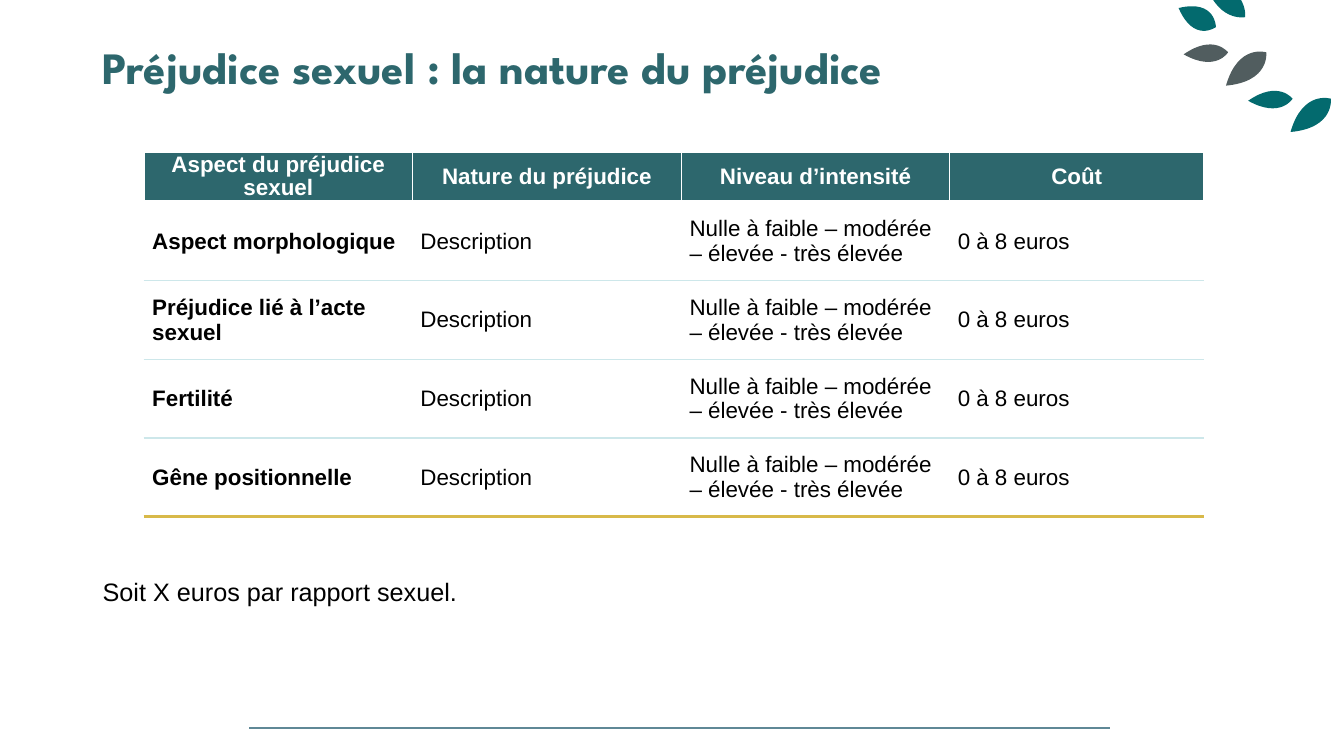
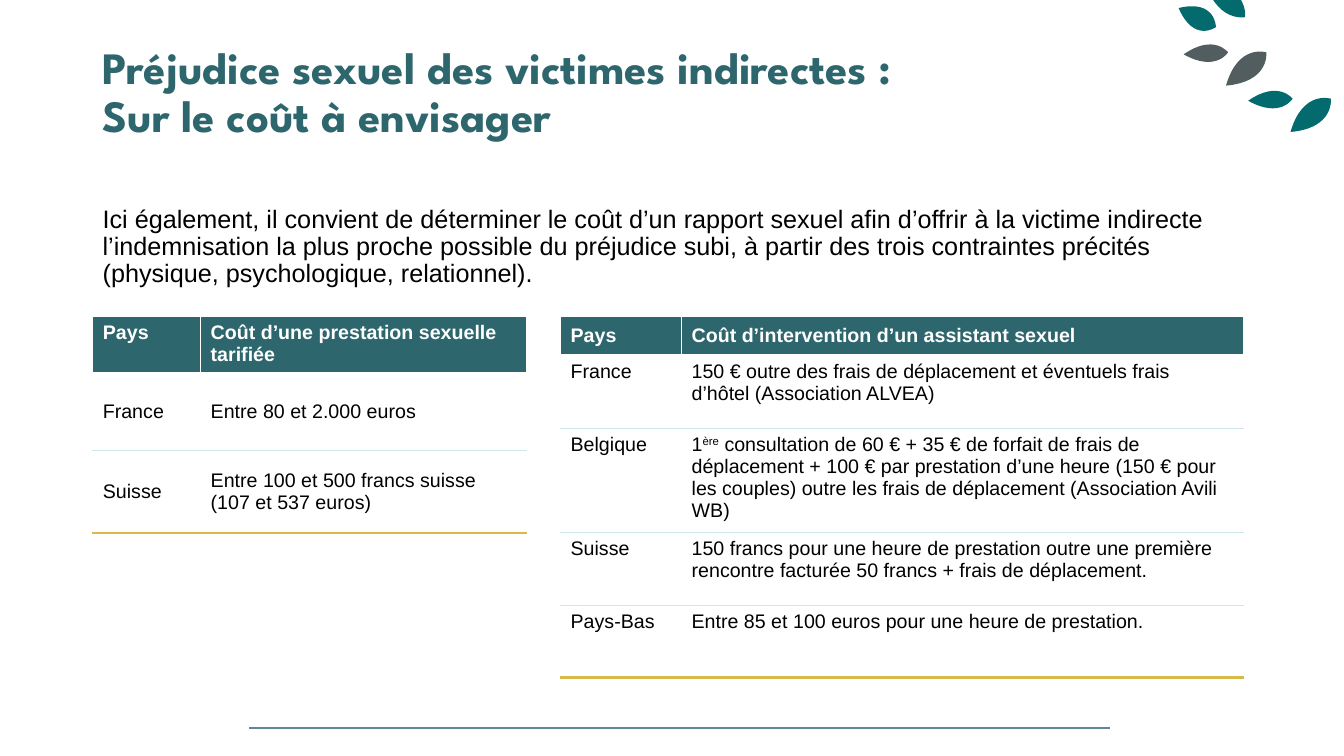
from lxml import etree
from pptx import Presentation
from pptx import util as u
from pptx.dml.color import RGBColor
from pptx.enum import shapes, text
from pptx.oxml import ns

MIDDLE, TOP = text.MSO_ANCHOR.MIDDLE, text.MSO_ANCHOR.TOP


def px(length):
    """Turn px, a hundred to the inch, into EMU."""
    return u.Emu(round(length * 9144))


def color(value):
    """Turn a hex string into a colour."""
    return RGBColor.from_string(value)


class Deck:
    """Hold the shared style and the slide being filled."""

    TITLE_FONT, BODY_FONT = "League Spartan", "Arial"
    TITLE, LEAF, GREY_LEAF, RULE = "2D676D", "036A6E", "515D5F", "5F8896"
    BLACK, WHITE, ROW_LINE, END_LINE = "000000", "FFFFFF", "CDE7EA", "D8B949"
    FLAT = ((32, 18), (44, -2), (30, -21))
    RISING = ((44, -4), (40, -33), (12, -42))
    FALLING = ((12, 45), (41, 39), (45, 9))
    SMALL = ((15, 35), (37, 19), (37, -9))
    LEAVES = (
        ((1238, 100), FLAT, LEAF),
        ((1280, 131), RISING, LEAF),
        ((1194, -22), FALLING, LEAF),
        ((1169, 8), SMALL, LEAF),
        ((1174, 54), FLAT, GREY_LEAF),
        ((1216, 85), RISING, GREY_LEAF),
    )

    def __init__(self):
        """Start an empty wide deck."""
        self.deck = Presentation()
        self.deck.slide_width, self.deck.slide_height = px(1333), px(750)
        self.page = None

    def new_page(self, title):
        """Add a slide with its leaves, bottom rule and title."""
        self.page = self.deck.slides.add_slide(self.deck.slide_layouts[6])
        self.rule(247, 1101, 722)
        for start, outline, fill in self.LEAVES:
            self.leaf(start, outline, fill)
        self.text_box(title, 40, 1019, 101, self.TITLE_FONT, 32, self.TITLE, True)

    def rule(self, left, right, top):
        """Draw a thin horizontal line."""
        line = self.page.shapes.add_connector(
            shapes.MSO_CONNECTOR.STRAIGHT, px(left), px(top), px(right), px(top))
        line.line.color.rgb = color(self.RULE)
        line.line.width = u.Pt(1.5)
        etree.SubElement(line._element.spPr, ns.qn("a:effectLst"))

    def leaf(self, start, outline, fill, steps=12):
        """Draw a leaf whose two curved edges meet at its tip."""
        upper, tip, lower = outline
        edges = (((0, 0), upper, tip, tip), (tip, tip, lower, (0, 0)))
        points = []
        for edge in edges:
            for step in range(1, steps + 1):
                t = step / steps
                weights = ((1 - t) ** 3, 3 * t * (1 - t) ** 2, 3 * t * t * (1 - t), t ** 3)
                points.append(tuple(
                    px(start[axis] + sum(w * p[axis] for w, p in zip(weights, edge)))
                    for axis in (0, 1)))
        builder = self.page.shapes.build_freeform(px(start[0]), px(start[1]))
        builder.add_line_segments(points, close=True)
        shape = builder.convert_to_shape()
        self.curve(shape, start, edges)
        shape.shadow.inherit = False
        shape.fill.solid()
        shape.fill.fore_color.rgb = color(fill)
        shape.line.fill.background()

    def curve(self, shape, start, edges):
        """Replace the straight segments of a shape with its curved edges."""
        outline = shape._element.spPr.find(".//" + ns.qn("a:path"))
        for segment in outline.findall(ns.qn("a:lnTo")):
            outline.remove(segment)
        for position, edge in enumerate(edges, 1):
            bezier = etree.Element(ns.qn("a:cubicBezTo"))
            for x, y in edge[1:]:
                etree.SubElement(bezier, ns.qn("a:pt"),
                                 x=str(px(start[0] + x) - shape.left),
                                 y=str(px(start[1] + y) - shape.top))
            outline.insert(position, bezier)

    def style(self, para, font, size, fill, bold=False):
        """Set the font of a whole paragraph, its end mark included."""
        para.font.name, para.font.size, para.font.bold = font, u.Pt(size), bold
        para.font.color.rgb = color(fill)
        etree.SubElement(para._p, ns.qn("a:endParaRPr"), sz=str(size * 100))

    def text_box(self, words, top, width, height, font, size, fill, bold=False):
        """Add a wrapped text box on the left margin."""
        box = self.page.shapes.add_textbox(px(92), px(top), px(width), px(height))
        box.text_frame.word_wrap = True
        para = box.text_frame.paragraphs[0]
        para.text = words
        para.line_spacing = 0.9
        self.style(para, font, size, fill, bold)

    def body(self, words, top, height):
        """Add running text."""
        self.text_box(words, top, 1150, height, self.BODY_FONT, 18, self.BLACK)

    def border(self, cell, bottom, bottom_width, top, top_width):
        """Draw the four borders of a cell."""
        sides = (("lnL", self.WHITE, 1), ("lnR", self.WHITE, 1),
                 ("lnT", top, top_width), ("lnB", bottom, bottom_width))
        for side, fill, width in sides:
            line = etree.SubElement(
                cell._tc.get_or_add_tcPr(), ns.qn("a:" + side), w=str(u.Pt(width)))
            solid = etree.SubElement(line, ns.qn("a:solidFill"))
            etree.SubElement(solid, ns.qn("a:srgbClr"), val=fill)

    def table(self, left, top, columns, heights, rows, size=14, head_anchor=MIDDLE,
              body_anchor=MIDDLE, margins=(10, 5), head_align=None, head_spacing=None,
              bold_first=False):
        """Add a table with a dark header; ^ marks superscript."""
        grid = self.page.shapes.add_table(
            len(rows), len(columns), px(left), px(top),
            px(sum(columns)), px(sum(heights))).table
        grid.horz_banding = False
        for column, width in zip(grid.columns, columns):
            column.width = px(width)
        lines = [(self.WHITE, 3)] + [(self.ROW_LINE, 1)] * (len(rows) - 2) + [(self.END_LINE, 2.25)]
        for r, row in enumerate(rows):
            head = r == 0
            grid.rows[r].height = px(heights[r])
            above = (self.WHITE, 1) if r < 2 else lines[r - 1]
            for c, words in enumerate(row):
                cell = grid.cell(r, c)
                cell.margin_left = cell.margin_right = px(margins[0])
                cell.margin_top = cell.margin_bottom = px(margins[1])
                cell.vertical_anchor = head_anchor if head else body_anchor
                self.border(cell, *lines[r], *above)
                para = cell.text_frame.paragraphs[0]
                self.fill_para(para, words)
                self.style(para, self.BODY_FONT, size, self.WHITE if head else self.BLACK,
                           head or (bold_first and c == 0))
                if head:
                    cell.fill.solid()
                    cell.fill.fore_color.rgb = color(self.TITLE)
                    para.alignment, para.line_spacing = head_align, head_spacing
                else:
                    cell.fill.background()

    def fill_para(self, para, words):
        """Write words, raising the parts between ^ marks."""
        if "^" not in words:
            para.text = words
            return
        for index, part in enumerate(words.split("^")):
            span = para.add_run()
            span.text = part
            if index % 2:
                span._r.get_or_add_rPr().set("baseline", "30000")


def main():
    """Build both slides and save the deck."""
    deck = Deck()

    deck.new_page("Préjudice sexuel : la nature du préjudice")
    aspects = ("Aspect morphologique", "Préjudice lié à l’acte sexuel",
               "Fertilité", "Gêne positionnelle")
    levels = "Nulle à faible – modérée – élevée - très élevée"
    deck.table(
        143, 151, (266, 267, 266, 252), (47, 78, 78, 78, 78),
        [("Aspect du préjudice sexuel", "Nature du préjudice", "Niveau d’intensité", "Coût")]
        + [(aspect, "Description", levels, "0 à 8 euros") for aspect in aspects],
        size=16, margins=(8, 0), head_align=text.PP_ALIGN.CENTER, head_spacing=0.93,
        bold_first=True)
    deck.body("Soit X euros par rapport sexuel.", 570, 65)

    deck.new_page("Préjudice sexuel des victimes indirectes :\vSur le coût à envisager")
    deck.body(
        "Ici également, il convient de déterminer le coût d’un rapport sexuel afin d’offrir "
        "à la victime indirecte l’indemnisation la plus proche possible du préjudice subi, "
        "à partir des trois contraintes précités (physique, psychologique, relationnel).",
        200, 100)
    deck.table(
        92, 314, (107, 323), (53, 76, 82),
        [("Pays", "Coût d’une prestation sexuelle tarifiée"),
         ("France", "Entre 80 et 2.000 euros"),
         ("Suisse", "Entre 100 et 500 francs suisse\v(107 et 537 euros)")],
        head_anchor=TOP)
    deck.table(
        556, 314, (120, 557), (39, 72, 95, 72, 72),
        [("Pays", "Coût d’intervention d’un assistant sexuel"),
         ("France", "150 € outre des frais de déplacement et éventuels frais d’hôtel "
                    "(Association ALVEA)"),
         ("Belgique", "1^ère^ consultation de 60 € + 35 € de forfait de frais de déplacement "
                      "+ 100 € par prestation d’une heure (150 € pour les couples) outre les "
                      "frais de déplacement (Association Avili WB)"),
         ("Suisse", "150 francs pour une heure de prestation outre une première rencontre "
                    "facturée 50 francs + frais de déplacement."),
         ("Pays-Bas", "Entre 85 et 100 euros pour une heure de prestation.")],
        body_anchor=TOP)

    deck.deck.save("out.pptx")


if __name__ == "__main__":
    main()
